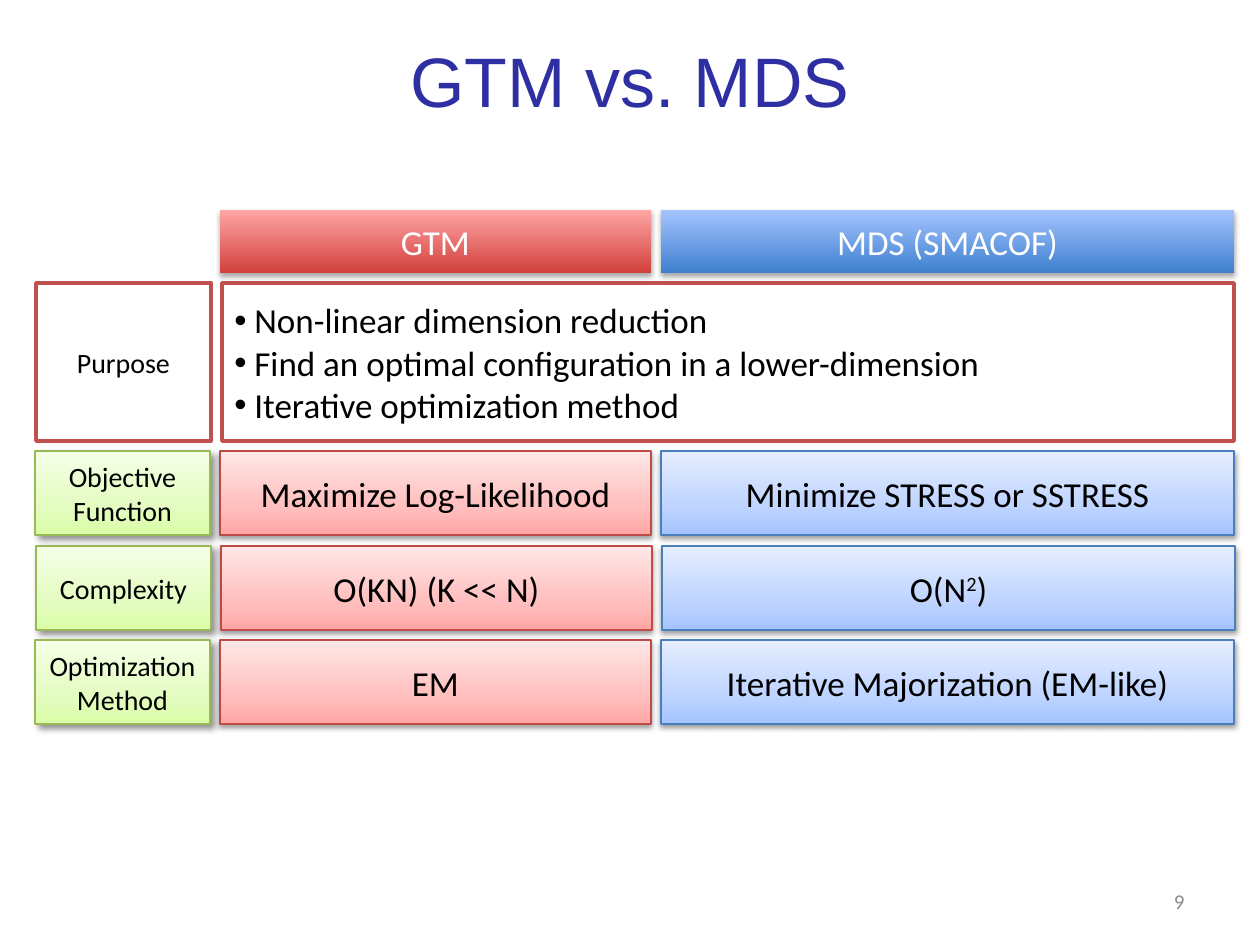
from lxml import etree
from pptx import Presentation, util as u
from pptx.dml.color import RGBColor
from pptx.enum import shapes, text
from pptx.oxml.ns import qn

PX = 914400 / 126
TITLE_BLUE = RGBColor(0x2F, 0x2F, 0xA4)
GREY = RGBColor(0x8C, 0x8C, 0x8C)
BLACK = RGBColor(0, 0, 0)
WHITE = RGBColor(0xFF, 0xFF, 0xFF)
RED_EDGE = RGBColor(0xBF, 0x4C, 0x48)
BLUE_EDGE = RGBColor(0x4B, 0x7E, 0xBC)
GREEN_EDGE = RGBColor(0x98, 0xB9, 0x55)
PURPOSE_EDGE = RGBColor(0xC0, 0x50, 0x4D)

# Gradient stops run from bottom to top: position in percent, colour
RED_HEAD = [(0, RGBColor(0xD1, 0x40, 0x3C)), (100, RGBColor(0xFF, 0xA6, 0xA5))]
BLUE_HEAD = [(0, RGBColor(0x3F, 0x80, 0xCE)), (100, RGBColor(0xA4, 0xC4, 0xFF))]
RED = [(0, RGBColor(0xFF, 0xA6, 0xA5)), (35, RGBColor(0xFF, 0xC0, 0xBF)),
       (100, RGBColor(0xFF, 0xE7, 0xE7))]
BLUE = [(0, RGBColor(0xA4, 0xC4, 0xFF)), (35, RGBColor(0xBF, 0xD4, 0xFF)),
        (100, RGBColor(0xE6, 0xEE, 0xFF))]
GREEN = [(0, RGBColor(0xDA, 0xFD, 0xA7)), (35, RGBColor(0xE4, 0xFC, 0xC2)),
         (100, RGBColor(0xF5, 0xFF, 0xE7))]

# Shadows: opacity in percent, blur and distance in points, angle in degrees
HEAD_SHADOW = (35, 3.1, 1.8, 90)
CELL_SHADOW = (38, 3.1, 1.6, 90)
LABEL_SHADOW = (43, 4, 3, 45)

# Columns: left, width
LABEL_COL, GTM_COL, MDS_COL = (35, 175), (220, 431), (661, 573)
HEAD_TOP, HEAD_HEIGHT = 210, 63
PURPOSE_TOP, PURPOSE_HEIGHT = 283, 158
ROW_HEIGHT = 84

PURPOSES = ["Non-linear dimension reduction",
            "Find an optimal configuration in a lower-dimension",
            "Iterative optimization method"]

# Rows: top, sideways nudge, label, GTM, MDS; ^ raises the next character
ROWS = [
    (451, 0, ["Objective", "Function"], "Maximize Log-Likelihood", "Minimize STRESS or SSTRESS"),
    (546, 1, ["Complexity"], "O(KN) (K << N)", "O(N^2)"),
    (640, 0, ["Optimization", "Method"], "EM", "Iterative Majorization (EM-like)"),
]


def px(*lengths):
    return [u.Emu(round(length * PX)) for length in lengths]


def write(shape, lines, size, color, align=text.PP_ALIGN.CENTER, font="Calibri"):
    frame = shape.text_frame
    frame.word_wrap = True
    frame.vertical_anchor = text.MSO_ANCHOR.MIDDLE
    for i, line in enumerate(lines):
        paragraph = frame.paragraphs[0] if i == 0 else frame.add_paragraph()
        paragraph.alignment = align
        paragraph.font.size = u.Pt(size)
        paragraph.font.name = font
        paragraph.font.color.rgb = color
        start, *raised = line.split("^")
        paragraph.add_run().text = start
        for part in raised:
            superscript = paragraph.add_run()
            superscript.text = part[0]
            superscript._r.get_or_add_rPr().set("baseline", "30000")
            paragraph.add_run().text = part[1:]


def add_stop_color(parent, color):
    return etree.SubElement(parent, qn("a:srgbClr"), val=str(color))


def fill_gradient(shape, stops):
    shape.fill.gradient()
    shape.fill.gradient_angle = 90
    stop_list = shape._element.spPr.find(".//" + qn("a:gsLst"))
    for old in list(stop_list):
        stop_list.remove(old)
    for position, color in stops:
        stop = etree.SubElement(stop_list, qn("a:gs"), pos=str(position * 1000))
        add_stop_color(stop, color)


def cast_shadow(shape, opacity, blur, distance, angle):
    effects = shape._element.spPr.find(qn("a:effectLst"))
    shadow = etree.SubElement(
        effects, qn("a:outerShdw"), blurRad=str(u.Pt(blur)), dist=str(u.Pt(distance)),
        dir=str(angle * 60000), rotWithShape="0")
    etree.SubElement(add_stop_color(shadow, BLACK), qn("a:alpha"), val=str(opacity * 1000))


def add_box(slide, column, top, height, fill, edge=None, edge_width=0.75, shadow=None):
    """Add a box; fill is one colour or a list of gradient stops."""
    left, width = column
    box = slide.shapes.add_shape(shapes.MSO_SHAPE.RECTANGLE, *px(left, top, width, height))
    box.shadow.inherit = False
    if isinstance(fill, list):
        fill_gradient(box, fill)
    else:
        box.fill.solid()
        box.fill.fore_color.rgb = fill
    if edge is None:
        box.line.fill.background()
    else:
        box.line.color.rgb = edge
        box.line.width = u.Pt(edge_width)
    if shadow:
        cast_shadow(box, *shadow)
    return box


def add_bullets(shape, indent):
    for paragraph in shape.text_frame.paragraphs:
        properties = paragraph._p.get_or_add_pPr()
        properties.set("marL", str(indent))
        properties.set("indent", str(-indent))
        bullet_font = etree.Element(qn("a:buFont"), typeface="Arial")
        bullet = etree.Element(qn("a:buChar"), char="•")
        defaults = properties.find(qn("a:defRPr"))
        defaults.addprevious(bullet_font)
        defaults.addprevious(bullet)


def main():
    deck = Presentation()
    deck.slide_width, deck.slide_height = px(1260, 945)
    slide = deck.slides.add_slide(deck.slide_layouts[6])

    title = slide.shapes.add_textbox(*px(63, 0, 1134, 158))
    write(title, ["GTM vs. MDS"], 40, TITLE_BLUE, font="Arial")
    number = slide.shapes.add_textbox(*px(903, 876, 294, 50))
    write(number, ["9"], 12, GREY, text.PP_ALIGN.RIGHT)

    for column, heading, fill in [(GTM_COL, "GTM", RED_HEAD),
                                  (MDS_COL, "MDS (SMACOF)", BLUE_HEAD)]:
        box = add_box(slide, column, HEAD_TOP, HEAD_HEIGHT, fill, shadow=HEAD_SHADOW)
        write(box, [heading], 20, WHITE)

    for top, nudge, label, gtm, mds in ROWS:
        cells = [
            (GTM_COL, [gtm], 20, RED, RED_EDGE, CELL_SHADOW),
            (MDS_COL, [mds], 20, BLUE, BLUE_EDGE, CELL_SHADOW),
            (LABEL_COL, label, 16, GREEN, GREEN_EDGE, LABEL_SHADOW),
        ]
        for (left, width), lines, size, fill, edge, shadow in cells:
            box = add_box(slide, (left + nudge, width), top, ROW_HEIGHT, fill, edge, shadow=shadow)
            write(box, lines, size, BLACK)

    purpose_left = GTM_COL[0] + 2
    purpose_col = (purpose_left, sum(MDS_COL) - purpose_left)
    purposes = add_box(slide, purpose_col, PURPOSE_TOP, PURPOSE_HEIGHT, WHITE, PURPOSE_EDGE, 2)
    write(purposes, PURPOSES, 20, BLACK, text.PP_ALIGN.LEFT)
    add_bullets(purposes, *px(20))
    label_col = (LABEL_COL[0] + 1, LABEL_COL[1])
    purpose = add_box(slide, label_col, PURPOSE_TOP, PURPOSE_HEIGHT, WHITE, PURPOSE_EDGE, 2)
    write(purpose, ["Purpose"], 16, BLACK)

    deck.save("out.pptx")


if __name__ == "__main__":
    main()
